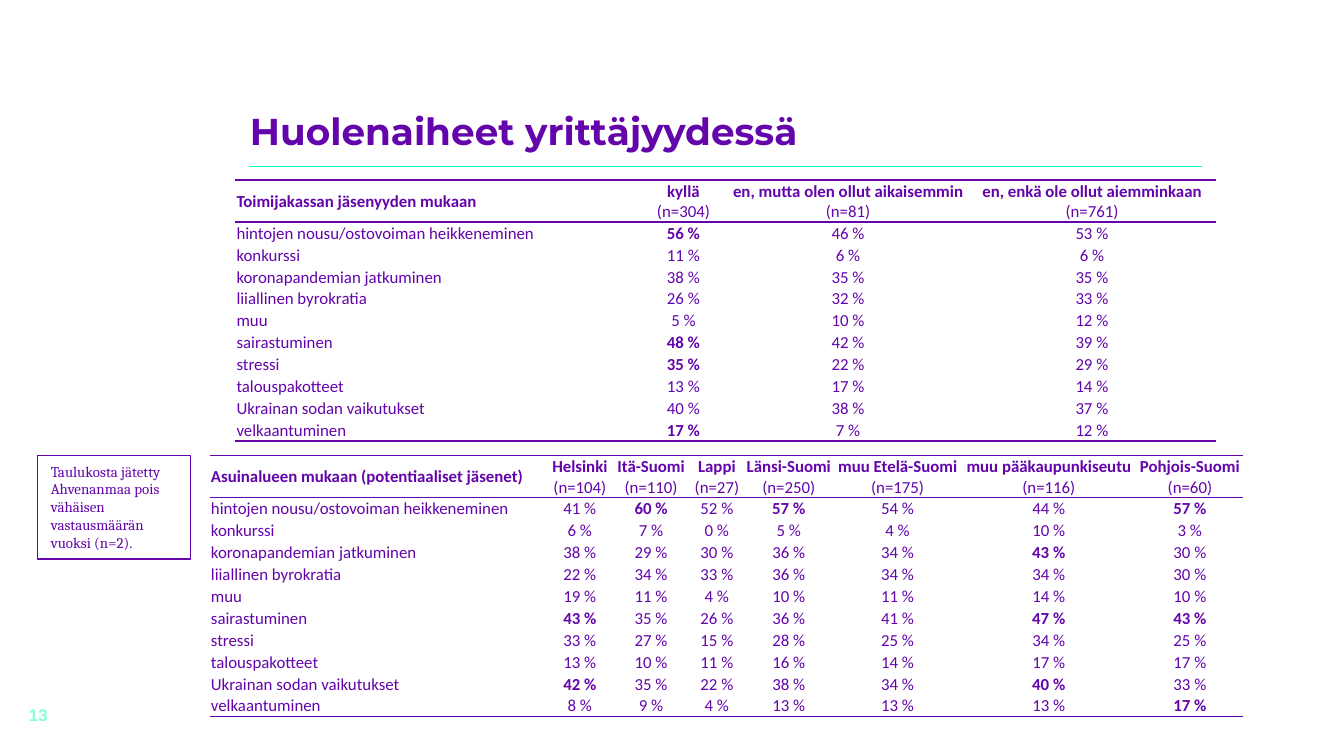
from lxml import etree
from pptx import Presentation
from pptx.dml.color import RGBColor
from pptx.enum.shapes import MSO_CONNECTOR, MSO_SHAPE
from pptx.enum.text import MSO_ANCHOR, PP_ALIGN
from pptx.oxml import parse_xml
from pptx.oxml.ns import nsdecls, qn
from pptx.util import Inches, Pt

LEFT, CENTER = PP_ALIGN.LEFT, PP_ALIGN.CENTER
TOP, MIDDLE = MSO_ANCHOR.TOP, MSO_ANCHOR.MIDDLE
LINE, RECT = MSO_CONNECTOR.STRAIGHT, MSO_SHAPE.RECTANGLE
PURPLE, TEAL, MINT = "6305AA", "00FFC9", "87FFD3"
PLAIN = "{2D5ABB26-0587-4C30-8999-92F81FD0307C}"  # table style without lines or fills


def rgb(code):
    return RGBColor.from_string(code)


def write(para, text, size, face, color=PURPLE, bold=False, align=LEFT):
    para.text = text
    para.alignment = align
    font = para.font
    font.size, font.name, font.bold = Pt(size), face, bold
    font.color.rgb = rgb(color)


prs = Presentation()
prs.slide_width = Inches(10)
prs.slide_height = prs.slide_width * 9 // 16
slide = prs.slides.add_slide(prs.slide_layouts[6])
shapes = slide.shapes

# Title, rule and page number
rule = shapes.add_connector(LINE, Inches(8.94), Inches(1.24), Inches(1.85), Inches(1.24))
rule.line.color.rgb = rgb(TEAL)
rule.line.width = Pt(0.75)
etree.SubElement(rule._element.spPr, qn("a:effectLst"))

title = shapes.add_textbox(Inches(1.86), Inches(0.84), Inches(7.09), Inches(0.37)).text_frame
title.word_wrap = True
title.margin_left = title.margin_top = 0
title.margin_right = title.margin_bottom = Inches(0.05)
write(title.paragraphs[0], "Huolenaiheet yrittäjyydessä", 20, "Montserrat", bold=True)
title.paragraphs[0].line_spacing = 0.9

page = shapes.add_textbox(0, Inches(5.17), Inches(0.57), Inches(0.3)).text_frame
page.word_wrap = True
page.vertical_anchor = MIDDLE
write(page.paragraphs[0], "13", 9, "Arial", MINT, True, CENTER)

# Tables: percentages per worry, a star marks bold
worries = ["hintojen nousu/ostovoiman heikkeneminen", "konkurssi",
           "koronapandemian jatkuminen", "liiallinen byrokratia", "muu",
           "sairastuminen", "stressi", "talouspakotteet",
           "Ukrainan sodan vaikutukset", "velkaantuminen"]
members = (
    1.75, 1.34, [3, 0.67, 1.78, 1.85],
    ["Toimijakassan jäsenyyden mukaan", "kyllä\n(n=304)",
     "en, mutta olen ollut aikaisemmin\n(n=81)",
     "en, enkä ole ollut aiemminkaan\n(n=761)"],
    ["56* 46 53", "11 6 6", "38 35 35", "26 32 33", "5 10 12",
     "48* 42 39", "35* 22 29", "13 17 14", "40 38 37", "17* 7 12"])
regions = (
    1.56, 3.39, [2.52, 0.47, 0.59, 0.39, 0.68, 0.94, 1.31, 0.79],
    ["Asuinalueen mukaan (potentiaaliset jäsenet)", "Helsinki\n(n=104)",
     "Itä-Suomi\n(n=110)", "Lappi\n(n=27)", "Länsi-Suomi\n(n=250)",
     "muu Etelä-Suomi\n(n=175)", "muu pääkaupunkiseutu\n(n=116)",
     "Pohjois-Suomi\n(n=60)"],
    ["41 60* 52 57* 54 44 57*", "6 7 0 5 4 10 3", "38 29 30 36 34 43* 30",
     "22 34 33 36 34 34 30", "19 11 4 10 11 14 10", "43* 35 26 36 41 47* 43*",
     "33 27 15 28 25 34 25", "13 10 11 16 14 17 17", "42* 35 22 38 34 40* 33",
     "8 9 4 13 13 13 17*"])

for left, top, widths, heads, shares in (members, regions):
    rows = [heads] + [[worry] + share.split() for worry, share in zip(worries, shares)]
    last = len(rows) - 1
    table = shapes.add_table(len(rows), len(widths), Inches(left), Inches(top),
                             Inches(sum(widths)), Inches(1.94)).table
    table.first_row = table.horz_banding = False
    table._tbl.tblPr.find(qn("a:tableStyleId")).text = PLAIN
    for col, width in zip(table.columns, widths):
        col.width = Inches(width)
    for r, row in enumerate(rows):
        table.rows[r].height = Inches(1.63) // last if r else Inches(0.31)
        for c, value in enumerate(row):
            cell = table.cell(r, c)
            cell.vertical_anchor = MIDDLE
            cell.margin_left = cell.margin_right = cell.margin_top = Inches(0.01)
            cell.margin_bottom = 0
            if r and c:
                lines = [value.rstrip("*") + " %"]
            else:
                lines = value.split("\n")
            frame = cell.text_frame
            for i, line in enumerate(lines):
                para = frame.add_paragraph() if i else frame.paragraphs[0]
                bold = value.endswith("*") if r else i == 0
                write(para, line, 9, "Calibri", bold=bold, align=CENTER if c else LEFT)
            sides = {0: ["lnT", "lnB"], last: ["lnB"]}.get(r, [])
            for i, side in enumerate(sides):
                edge = parse_xml(
                    f'<a:{side} {nsdecls("a")} w="{Pt(1)}"><a:solidFill>'
                    f'<a:srgbClr val="{PURPLE}"/></a:solidFill></a:{side}>')
                cell._tc.get_or_add_tcPr().insert(i, edge)

# Side note
note = shapes.add_shape(RECT, Inches(0.28), Inches(3.39), Inches(1.14), Inches(0.77))
note.shadow.inherit = False
note.fill.background()
note.line.color.rgb = rgb(PURPLE)
note.line.width = Pt(0.75)
frame = note.text_frame
frame.word_wrap = True
frame.vertical_anchor = TOP
write(frame.paragraphs[0],
      "Taulukosta jätetty Ahvenanmaa pois vähäisen vastausmäärän vuoksi (n=2).",
      8, "Cambria")

prs.save("out.pptx")
